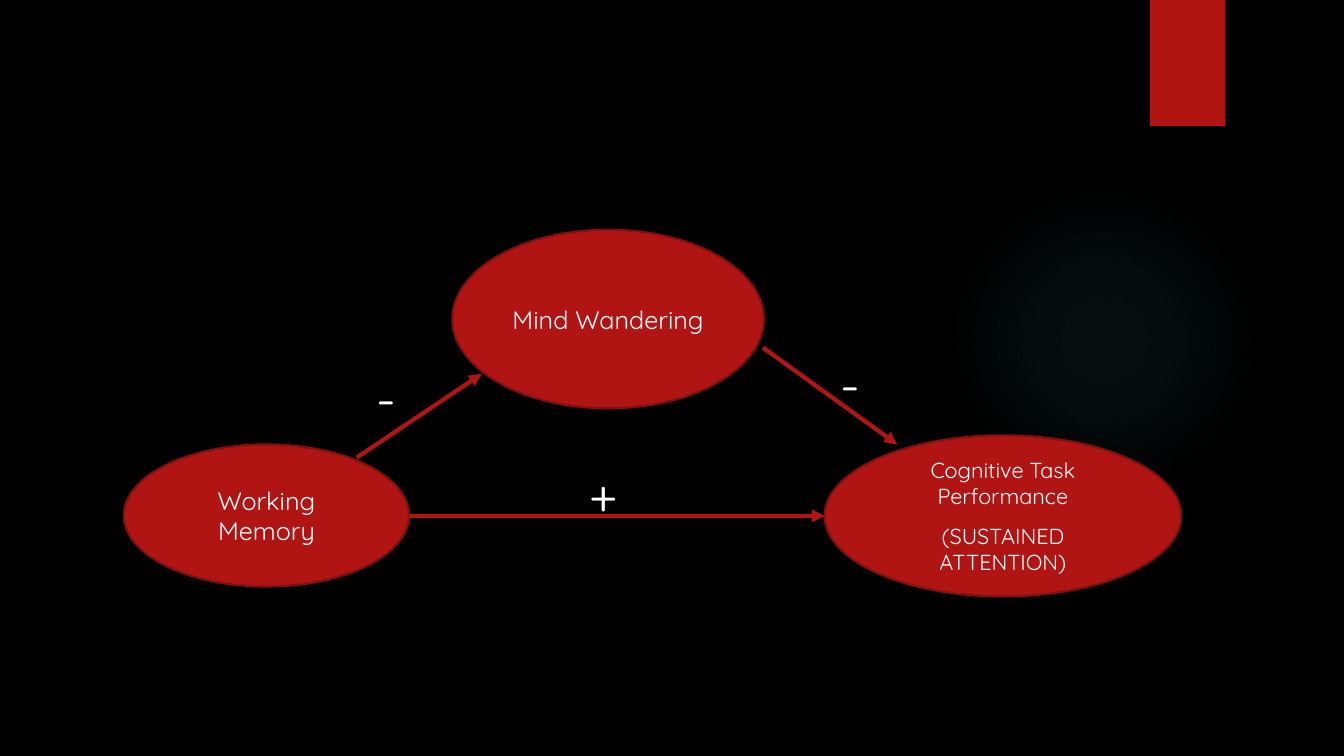
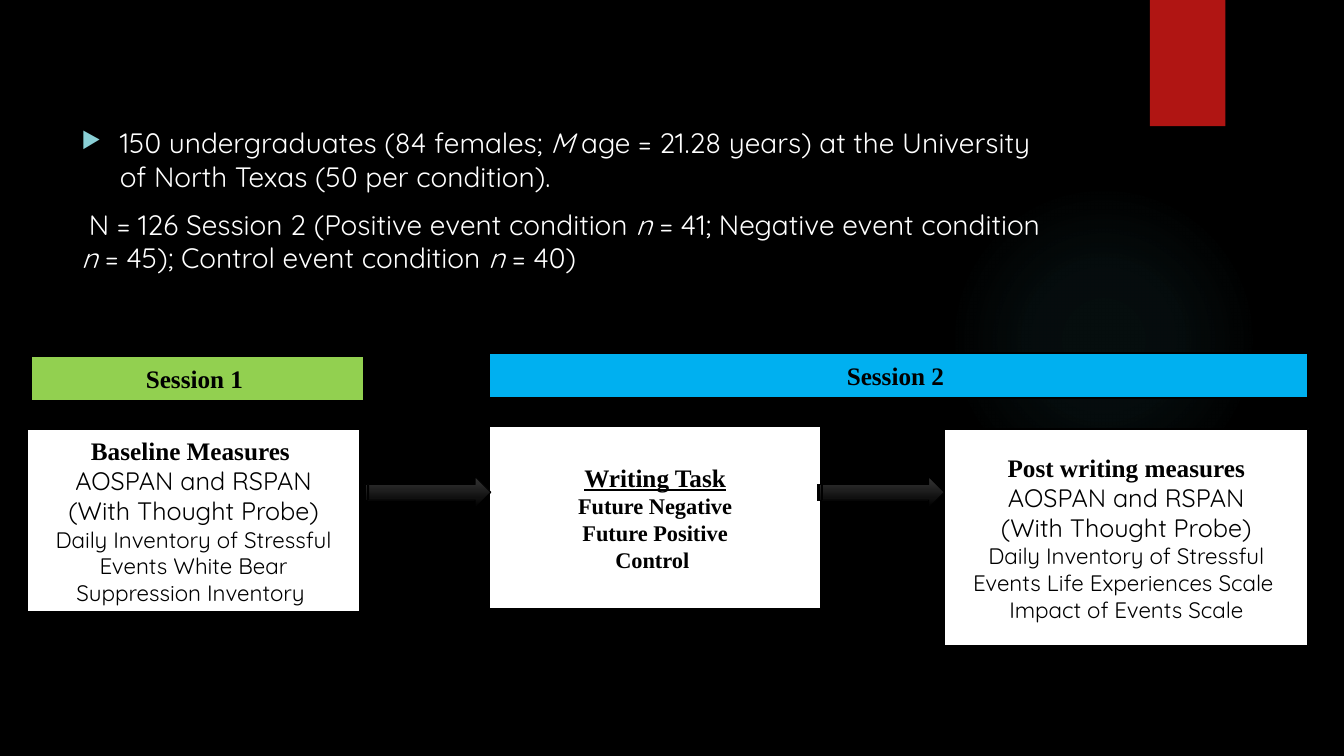
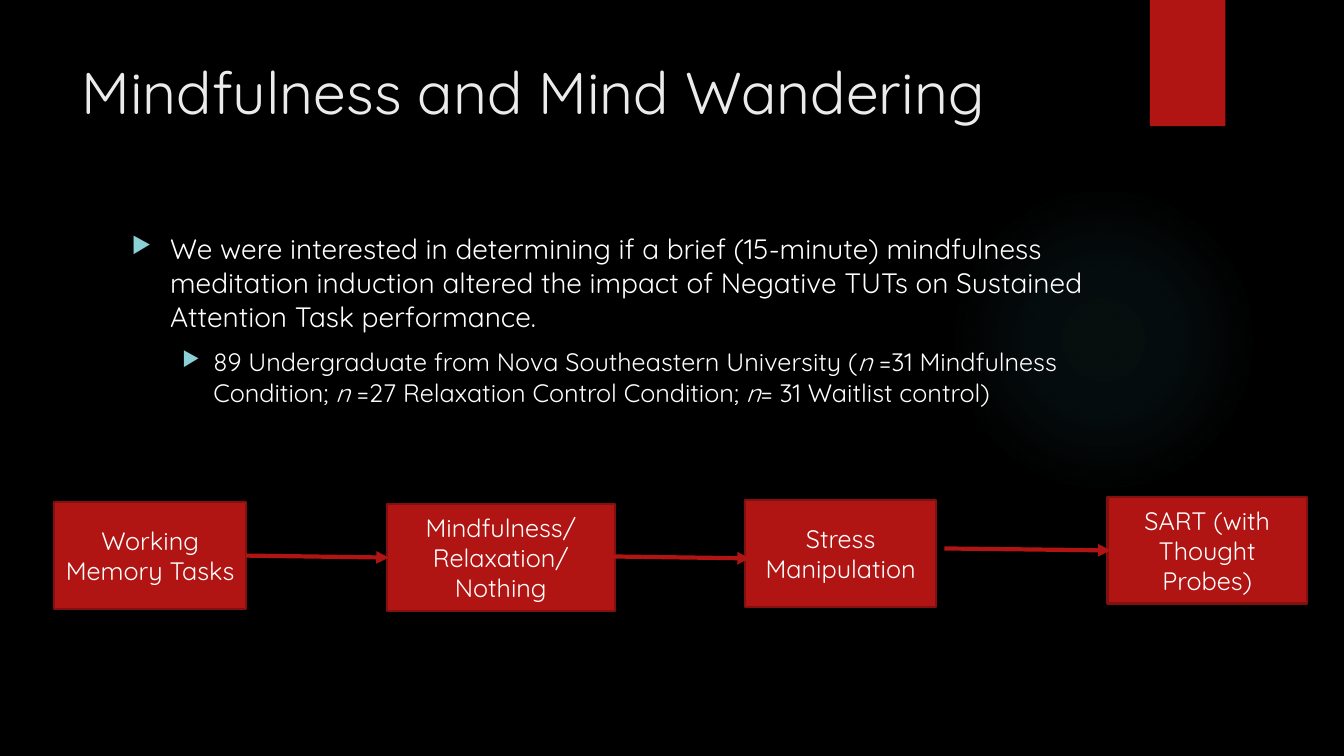
from pptx import Presentation
from pptx import util as u
from pptx.dml.color import RGBColor
from pptx.enum import shapes, text
from pptx.oxml import parse_xml
from pptx.oxml.ns import nsdecls, qn

BLACK = RGBColor(0x00, 0x00, 0x00)
WHITE = RGBColor(0xFF, 0xFF, 0xFF)
OFF_WHITE = RGBColor(0xEB, 0xEB, 0xEB)
RED = RGBColor(0xB0, 0x15, 0x13)
DARK_RED = RGBColor(0x82, 0x10, 0x0E)
TEAL = RGBColor(0x50, 0xB9, 0xC1)
PALE_TEAL = RGBColor(0x8A, 0xD0, 0xD6)
GREEN = RGBColor(0x92, 0xD0, 0x50)
BLUE = RGBColor(0x00, 0xB0, 0xF0)
CHARCOAL = RGBColor(0x35, 0x35, 0x35)

SANS, SERIF = "Quicksand", "Times New Roman"
OVAL = shapes.MSO_SHAPE.OVAL
RECT = shapes.MSO_SHAPE.RECTANGLE
STRIPED_ARROW = shapes.MSO_SHAPE.STRIPED_RIGHT_ARROW
TITLE_ONLY, BLANK = 5, 6

# Text formats
NODE = dict(size=18, name=SANS, color=WHITE)
BODY = dict(NODE, size=20)
SIGN = dict(NODE, size=36)
TITLE = dict(NODE, size=42, color=OFF_WHITE)
HEAD = dict(size=18, name=SERIF, color=BLACK, bold=True)
TASK = dict(HEAD, underline=True)
CONDITION = dict(HEAD, size=16)
MEASURE = dict(NODE, color=BLACK)
DETAIL = dict(MEASURE, size=16)

# Bullet margins: left, hanging
BULLET_1 = (0.97, 0.97)
BULLET_2 = (2.06, 0.79)


class Deck:
    """Holds the style and the current slide."""

    def __init__(self):
        self.prs = Presentation()
        self.prs.slide_width, self.prs.slide_height = u.Cm(33.87), u.Cm(19.05)
        fill = self.prs.slide_master.background.fill
        fill.solid()
        fill.fore_color.rgb = BLACK
        self.s = None

    def slide(self, title=None):
        layout = BLANK if title is None else TITLE_ONLY
        self.s = self.prs.slides.add_slide(self.prs.slide_layouts[layout])
        # Shared decoration: soft glow and red tab
        glow = self.shape(OVAL, (23.9, 4.65, 7.82, 7.82))
        self.gradient(glow, [(0, TEAL, 7), (36, TEAL, 6), (69, TEAL, 0)],
                      '<a:path path="circle"><a:fillToRect l="50000" t="50000"'
                      ' r="50000" b="50000"/></a:path>')
        self.shape(RECT, (28.98, 0, 1.9, 3.18), RED)
        if title is not None:
            sp = self.s.shapes.title
            sp.left, sp.top, sp.width, sp.height = map(
                u.Cm, (1.8, 1.27, 26.14, 3.89))
            self.put_text(sp, [(title, TITLE)], text.PP_ALIGN.LEFT,
                          text.MSO_ANCHOR.TOP)

    def shape(self, kind, box, fill=None, line=None, paras=(), width=1.5, gap=0):
        sp = self.s.shapes.add_shape(kind, *map(u.Cm, box))
        sp.shadow.inherit = False
        for part, color in ((sp.fill, fill), (sp.line.fill, line)):
            if color is None:
                part.background()
            else:
                part.solid()
                part.fore_color.rgb = color
        if line is not None:
            sp.line.width = u.Pt(width)
        if paras:
            self.put_text(sp, paras, text.PP_ALIGN.CENTER,
                          text.MSO_ANCHOR.MIDDLE, gap)
        return sp

    def node(self, kind, box, *lines, size=18, gap=0):
        fmt = dict(NODE, size=size)
        self.shape(kind, box, RED, DARK_RED, [(t, fmt) for t in lines], gap=gap)

    def textbox(self, box, paras, gap=0, wrap=True):
        sp = self.s.shapes.add_textbox(*map(u.Cm, box))
        self.put_text(sp, paras, text.PP_ALIGN.LEFT, text.MSO_ANCHOR.TOP,
                      gap, wrap)

    def put_text(self, sp, paras, align, anchor, gap=0, wrap=True):
        """Paragraphs are (text, format[, bullet]); *marks* set italics."""
        tf = sp.text_frame
        for key, value in dict(word_wrap=wrap, vertical_anchor=anchor,
                               auto_size=text.MSO_AUTO_SIZE.NONE).items():
            setattr(tf, key, value)
        for i, (content, fmt, *bullet) in enumerate(paras):
            p = tf.add_paragraph() if i else tf.paragraphs[0]
            if bullet:
                self.bullet(p, *bullet[0])
            p.alignment = align
            p.space_before = u.Pt(gap if i else 0)
            for j, part in enumerate(content.split("*")):
                if part:
                    r = p.add_run()
                    r.text = part
                    self.style_font(r.font, dict(fmt, italic=j % 2 == 1))

    def style_font(self, font, fmt):
        for key, value in fmt.items():
            if key == "color":
                font.color.rgb = value
            else:
                setattr(font, key, u.Pt(value) if key == "size" else value)

    def bullet(self, p, left, hang):
        pPr = p._p.get_or_add_pPr()
        pPr.set("marL", str(u.Cm(left)))
        pPr.set("indent", str(-u.Cm(hang)))
        for xml in (f'<a:buClr %s><a:srgbClr val="{PALE_TEAL}"/></a:buClr>',
                    '<a:buSzPct %s val="80000"/>',
                    '<a:buChar %s char="▶"/>'):
            pPr.append(parse_xml(xml % nsdecls("a")))

    def gradient(self, sp, stops, direction):
        """Stops are (position, colour, opacity), both in per cent."""
        gs = "".join(
            f'<a:gs pos="{pos * 1000}"><a:srgbClr val="{color}">'
            f'<a:alpha val="{alpha * 1000}"/></a:srgbClr></a:gs>'
            for pos, color, alpha in stops)
        spPr = sp._element.spPr
        spPr.replace(spPr.find(qn("a:noFill")), parse_xml(
            f'<a:gradFill {nsdecls("a")}><a:gsLst>{gs}</a:gsLst>'
            f'{direction}</a:gradFill>'))

    def arrow(self, *ends):
        cn = self.s.shapes.add_connector(
            shapes.MSO_CONNECTOR.STRAIGHT, *map(u.Cm, ends))
        cn.line.color.rgb = RED
        cn.line.width = u.Pt(3)
        spPr = cn._element.spPr
        spPr.find(qn("a:ln")).append(
            parse_xml(f'<a:tailEnd {nsdecls("a")} type="triangle"/>'))
        spPr.append(parse_xml(f'<a:effectLst {nsdecls("a")}/>'))


def mediation_model(d):
    d.slide()
    d.node(OVAL, (3.12, 11.2, 7.19, 3.58), "Working Memory")
    d.node(OVAL, (11.4, 5.79, 7.85, 4.5), "Mind Wandering")
    d.node(OVAL, (20.78, 10.97, 8.99, 4.06), "Cognitive Task Performance",
           "(SUSTAINED ATTENTION)", size=15.5, gap=10)
    # Paths and their signs
    for ends in ((10.31, 13, 20.78, 13), (8.99, 11.53, 12.14, 9.42),
                 (19.23, 8.76, 22.61, 11.2)):
        d.arrow(*ends)
    for sign, x, y, w in (("-", 9.25, 9.09, 0.94), ("+", 14.6, 11.53, 1.3),
                          ("-", 20.93, 8.76, 0.94)):
        d.textbox((x, y, w, 1.8), [(sign, SIGN)], wrap=False)


def session_design(d):
    d.slide()
    d.textbox((1.8, 3.05, 24.84, 11.66), [
        ("150 undergraduates (84 females; *M* age = 21.28 years) at the "
         "University of North Texas (50 per condition).", BODY, BULLET_1),
        (" N = 126 Session 2 (Positive event condition *n *= 41; Negative event "
         "condition *n *= 45); Control event condition *n *= 40)", BODY)], gap=10)
    # Steps
    span_tasks = [("AOSPAN and RSPAN", MEASURE), ("(With Thought Probe)", MEASURE)]
    steps = [
        ((0.69, 10.82, 8.38, 4.6),
         [("Baseline Measures ", HEAD), *span_tasks,
          ("Daily Inventory of Stressful Events White Bear "
           "Suppression Inventory ", DETAIL)]),
        ((12.32, 10.74, 8.38, 4.6),
         [("Writing Task", TASK)] + [(t, CONDITION) for t in (
             "Future Negative", "Future Positive", "Control ")]),
        ((23.8, 10.8, 9.17, 5.49),
         [("Post writing measures", HEAD), *span_tasks,
          ("Daily Inventory of Stressful Events Life Experiences Scale ", DETAIL),
          ("Impact of Events Scale", DETAIL)]),
    ]
    for box, paras in steps:
        d.shape(RECT, box, WHITE, BLACK, paras)
    for x in (9.17, 20.6):
        sp = d.shape(STRIPED_ARROW, (x, 12.01, 3.2, 0.79), line=BLACK, width=0.75)
        d.gradient(sp, [(0, CHARCOAL, 100), (100, BLACK, 100)],
                   '<a:lin ang="5400000" scaled="0"/>')
    # Session bars
    for label, box, color in (
            ("Session 1 ", (0.79, 8.97, 8.38, 1.14), GREEN),
            ("Session 2 ", (12.32, 8.89, 20.65, 1.14), BLUE)):
        d.shape(RECT, box, color, BLACK, [(label, HEAD)])


def mindfulness_study(d):
    d.slide("Mindfulness and Mind Wandering")
    d.textbox((3.07, 5.72, 24.84, 11.66), [
        ("We were interested in determining if a brief (15-minute) mindfulness "
         "meditation induction altered the impact of Negative TUTs on Sustained "
         "Attention Task performance.", BODY, BULLET_1),
        ("89 Undergraduate from Nova Southeastern University (*n* =31 Mindfulness "
         "Condition; *n* =27 Relaxation Control Condition; *n*= 31 Waitlist "
         "control)", NODE, BULLET_2)], gap=10)
    # Procedure
    for x, y, w, lines in (
            (1.37, 12.65, 4.83, ["Working Memory Tasks"]),
            (9.75, 12.7, 5.74, ["Mindfulness/", "Relaxation/ Nothing"]),
            (18.77, 12.6, 4.83, ["Stress Manipulation"]),
            (27.91, 12.52, 5.03, ["SART (with Thought Probes)"])):
        d.node(RECT, (x, y, w, 2.69), *lines)
    for x1, y, x2 in ((6.2, 14, 9.8), (15.29, 14.02, 18.9), (23.8, 13.82, 27.99)):
        d.arrow(x1, y, x2, y + 0.05)


def main():
    d = Deck()
    for build in (mediation_model, session_design, mindfulness_study):
        build(d)
    d.prs.save("out.pptx")


if __name__ == "__main__":
    main()
